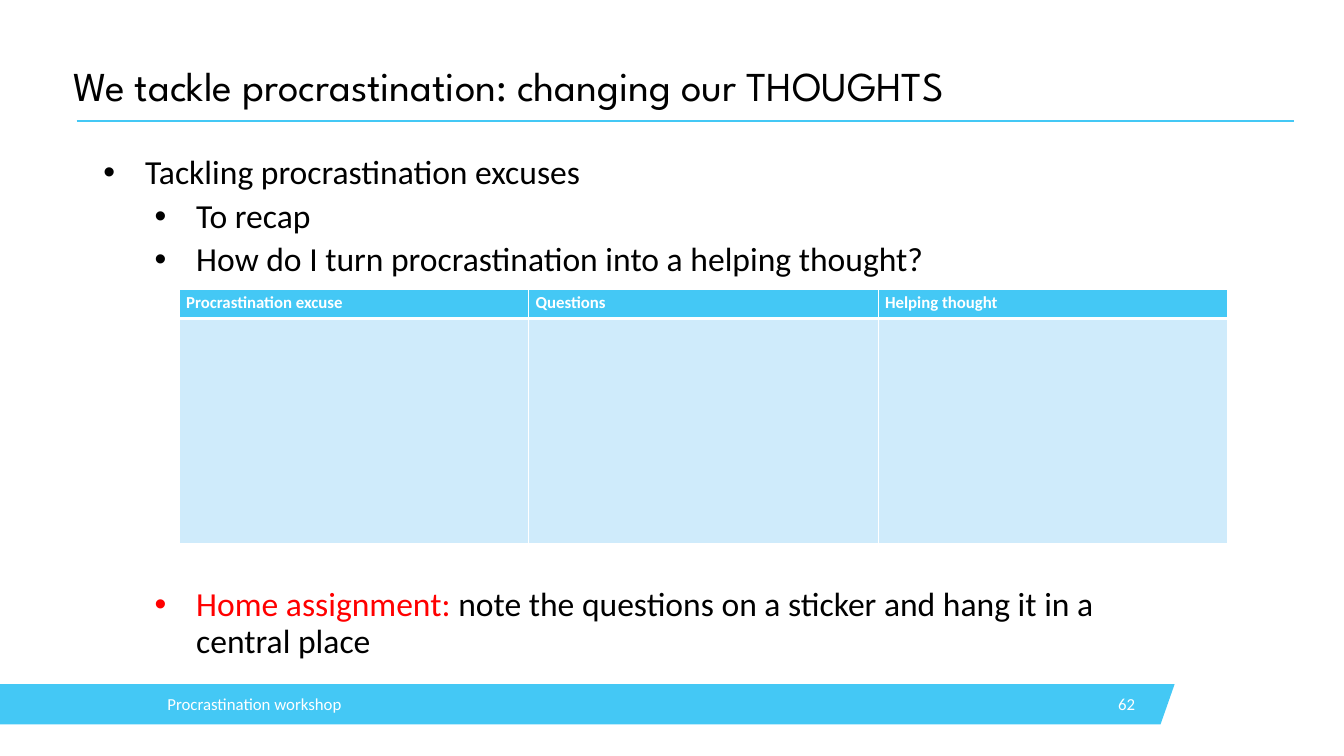
from lxml import etree
from pptx import Presentation
from pptx.dml.color import RGBColor
from pptx.enum.shapes import MSO_CONNECTOR
from pptx.enum.text import MSO_ANCHOR, MSO_AUTO_SIZE, PP_ALIGN
from pptx.oxml.ns import qn
from pptx.util import Inches, Pt

SKY = RGBColor(0x44, 0xC8, 0xF5)
PALE = RGBColor(0xCF, 0xEB, 0xFB)
RED = RGBColor(0xFF, 0x00, 0x00)
BLACK = RGBColor(0x00, 0x00, 0x00)
WHITE = RGBColor(0xFF, 0xFF, 0xFF)
BODY_FONT = "Calibri"
TITLE_FONT = "League Spartan"

BAND_TOP, BAND_HEIGHT = 10.18, 0.6

# Level, space before in points, runs of text and colour
BULLETS = [
    (0, 0, [("Tackling procrastination excuses", BLACK)]),
    (1, 7.5, [("To recap", BLACK)]),
    (1, 7.5, [("How do I turn procrastination into a helping thought?", BLACK)]),
    # The wide space leaves room for the table
    (1, 331, [("Home assignment: ", RED),
              ("note the questions on a sticker and hang it in a central place", BLACK)]),
]
HEADERS = ["Procrastination excuse", "Questions", "Helping thought"]


def place(shape, left, top, width, height):
    shape.left, shape.top = Inches(left), Inches(top)
    shape.width, shape.height = Inches(width), Inches(height)


def add_run(paragraph, text, size, color, font=BODY_FONT, bold=False):
    run = paragraph.add_run()
    run.text = text
    run.font.name = font
    run.font.size = Pt(size)
    run.font.bold = bold
    run.font.color.rgb = color


def set_frame(frame, anchor, inset=None):
    frame.word_wrap = True
    frame.auto_size = MSO_AUTO_SIZE.NONE
    frame.vertical_anchor = anchor
    if inset is not None:
        frame.margin_left = frame.margin_right = Inches(inset)
        frame.margin_top = frame.margin_bottom = Inches(inset)


def add_footer_band(slide):
    bottom = BAND_TOP + BAND_HEIGHT
    builder = slide.shapes.build_freeform(0, Inches(BAND_TOP), scale=1.0)
    corners = [(17.48, BAND_TOP), (17.27, bottom), (0, bottom)]
    builder.add_line_segments([(Inches(x), Inches(y)) for x, y in corners])
    band = builder.convert_to_shape()
    band.shadow.inherit = False
    band.fill.solid()
    band.fill.fore_color.rgb = SKY
    band.line.fill.background()


def add_rule(slide):
    rule = slide.shapes.add_connector(
        MSO_CONNECTOR.STRAIGHT, Inches(1.14), Inches(1.8), Inches(19.25), Inches(1.8))
    rule.line.color.rgb = SKY
    rule.line.width = Pt(2.25)
    etree.SubElement(rule._element.spPr, qn("a:effectLst"))


def add_footer_text(slide, text, left, width, align, inset=None):
    box = slide.shapes.add_textbox(
        Inches(left), Inches(BAND_TOP), Inches(width), Inches(BAND_HEIGHT))
    set_frame(box.text_frame, MSO_ANCHOR.MIDDLE, inset)
    paragraph = box.text_frame.paragraphs[0]
    paragraph.alignment = align
    add_run(paragraph, text, 18, WHITE)


def fill_title(title):
    place(title, 1.09, 0.97, 18.13, 0.69)
    set_frame(title.text_frame, MSO_ANCHOR.MIDDLE, 0)
    paragraph = title.text_frame.paragraphs[0]
    paragraph.alignment = PP_ALIGN.LEFT
    paragraph.line_spacing = 0.9
    add_run(paragraph, "We tackle procrastination: changing our THOUGHTS",
            44, BLACK, TITLE_FONT)


def set_bullet(paragraph, left):
    properties = paragraph._p.get_or_add_pPr()
    properties.set("marL", str(Inches(left)))
    properties.set("indent", str(-Inches(0.62)))
    etree.SubElement(properties, qn("a:buFont")).set("typeface", "Arial")
    etree.SubElement(properties, qn("a:buChar")).set("char", "•")


def fill_body(body):
    place(body, 1.44, 2.27, 16.3, 6.61)
    frame = body.text_frame
    set_frame(frame, MSO_ANCHOR.TOP)
    for index, (level, space, runs) in enumerate(BULLETS):
        paragraph = frame.add_paragraph() if index else frame.paragraphs[0]
        paragraph.level = level
        set_bullet(paragraph, 1.38 if level else 0.62)
        paragraph.line_spacing = 0.9
        paragraph.space_before = Pt(space)
        for text, color in runs:
            add_run(paragraph, text, 36, color)


def set_borders(cell, bottom_width):
    properties = cell._tc.get_or_add_tcPr()
    widths = {"lnL": 1, "lnR": 1, "lnT": 1, "lnB": bottom_width}
    for side, width in widths.items():
        line = etree.SubElement(properties, qn(f"a:{side}"), w=str(Pt(width)))
        fill = etree.SubElement(line, qn("a:solidFill"))
        etree.SubElement(fill, qn("a:srgbClr"), val=str(WHITE))


def add_thought_table(slide):
    heights = [0.44, 3.34]
    table = slide.shapes.add_table(
        2, len(HEADERS), Inches(2.67), Inches(4.3),
        Inches(15.6), Inches(sum(heights))).table
    for row, height in zip(table.rows, heights):
        row.height = Inches(height)
    for column, header in enumerate(HEADERS):
        table.columns[column].width = Inches(5.2)
        for row, (color, bottom_width) in enumerate([(SKY, 3), (PALE, 1)]):
            cell = table.cell(row, column)
            set_borders(cell, bottom_width)
            cell.fill.solid()
            cell.fill.fore_color.rgb = color
        add_run(table.cell(0, column).text_frame.paragraphs[0],
                header, 18, WHITE, bold=True)


def main():
    presentation = Presentation()
    presentation.slide_width = Inches(20)
    presentation.slide_height = Inches(11.25)
    slide = presentation.slides.add_slide(presentation.slide_layouts[1])

    # Frame of the slide
    add_footer_band(slide)
    add_rule(slide)
    add_footer_text(slide, "Procrastination workshop", 2.49, 6.75, PP_ALIGN.LEFT, 0)
    add_footer_text(slide, "62", 15.9, 1.09, PP_ALIGN.RIGHT)

    # Content
    fill_title(slide.shapes.title)
    fill_body(slide.placeholders[1])
    add_thought_table(slide)

    presentation.save("out.pptx")


if __name__ == "__main__":
    main()
